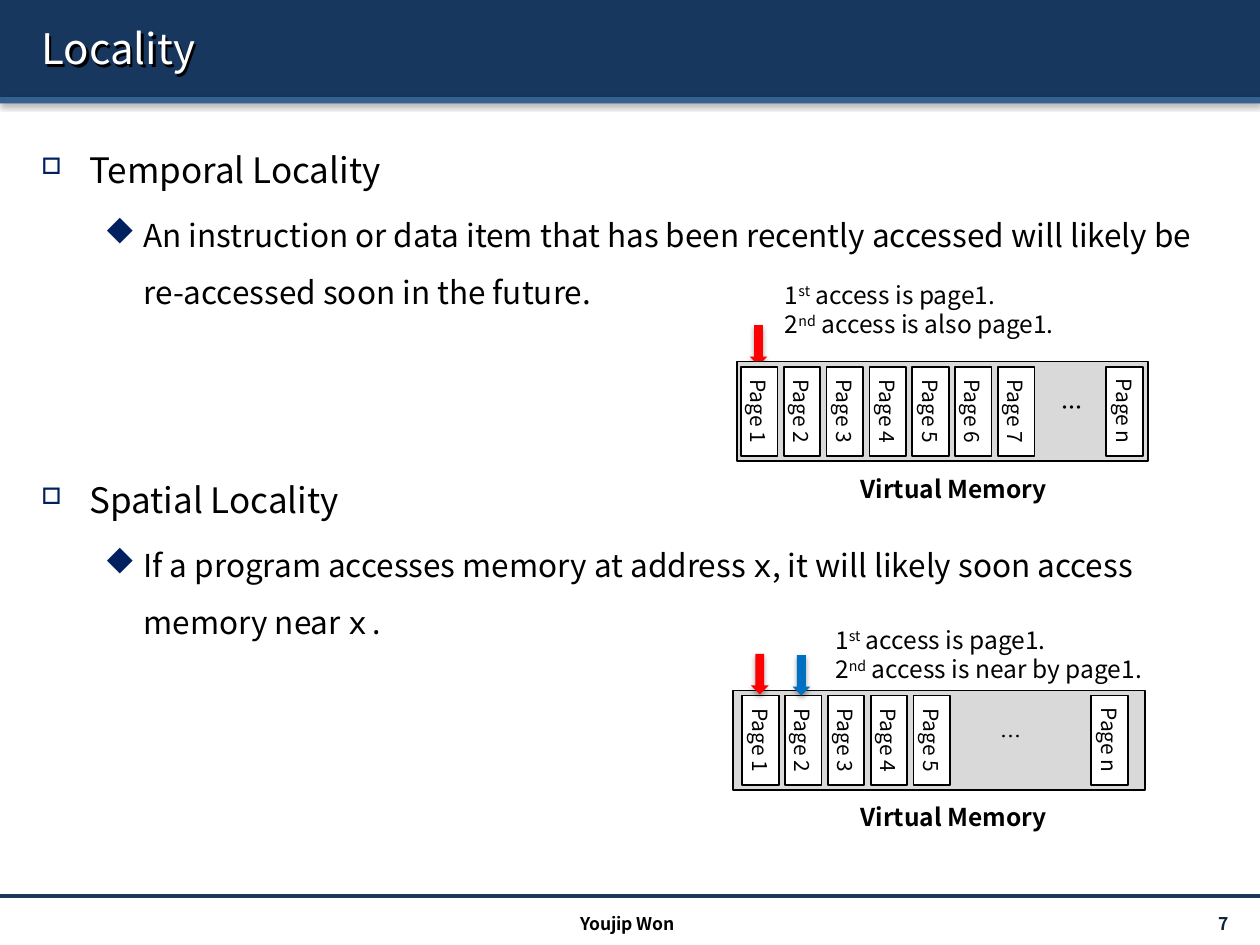
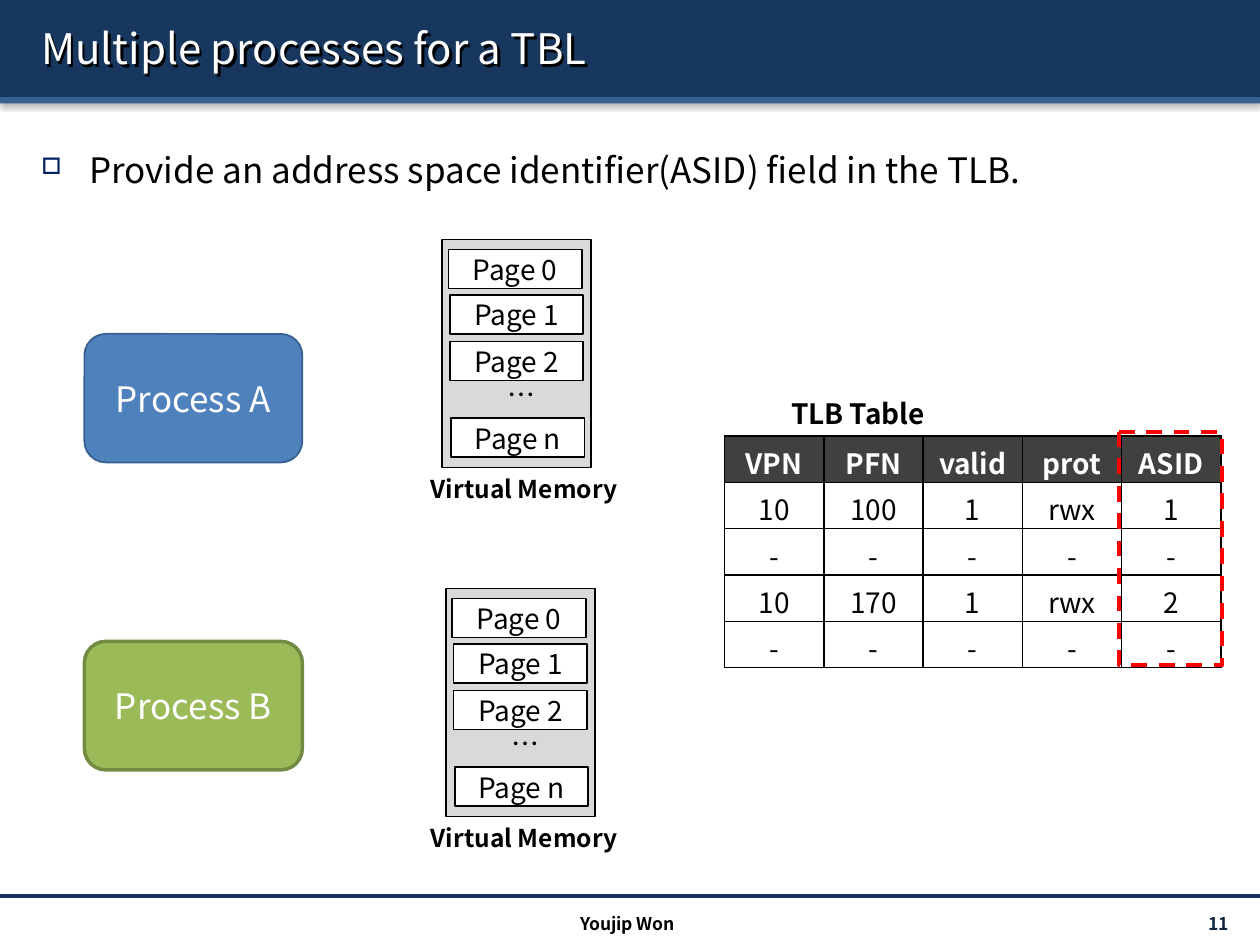
"""Two lecture slides on locality and address space identifiers."""
from dataclasses import dataclass

from lxml import etree
from pptx import Presentation
from pptx.dml.color import RGBColor
from pptx.enum.dml import MSO_LINE
from pptx.enum.shapes import MSO_CONNECTOR, MSO_SHAPE
from pptx.enum.text import MSO_ANCHOR, MSO_AUTO_SIZE, PP_ALIGN
from pptx.oxml import parse_xml
from pptx.oxml.ns import qn
from pptx.util import Inches, Pt

RECT, ROUND, DOWN = MSO_SHAPE.RECTANGLE, MSO_SHAPE.ROUNDED_RECTANGLE, MSO_SHAPE.DOWN_ARROW
LEFT, CENTER, RIGHT = PP_ALIGN.LEFT, PP_ALIGN.CENTER, PP_ALIGN.RIGHT
TOP, MIDDLE = MSO_ANCHOR.TOP, MSO_ANCHOR.MIDDLE
STRAIGHT, DASH = MSO_CONNECTOR.STRAIGHT, MSO_LINE.DASH
GROW = MSO_AUTO_SIZE.SHAPE_TO_FIT_TEXT
NS = 'xmlns:a="http://schemas.openxmlformats.org/drawingml/2006/main"'


@dataclass(frozen=True)
class Theme:
    """Fonts, colours and type sizes of the deck."""
    font: str = "Noto Sans CJK KR"
    mono: str = "Noto Sans Mono"
    symbol: str = "Wingdings"
    black: str = "000000"
    white: str = "FFFFFF"
    navy: str = "17375E"
    blue: str = "376092"
    number: str = "0F243E"
    bullet: str = "002060"
    memory: str = "D9D9D9"
    header: str = "404040"
    red: str = "FF0000"
    second: str = "0070C0"
    process_a: str = "4F81BD"
    process_b: str = "9BBB59"
    process_b_edge: str = "738A42"
    title: int = 24
    head: int = 20
    body: int = 18
    label: int = 16
    note: int = 14
    small: int = 12
    footer: int = 10


T = Theme()
LEVELS = (
    {"char": "o", "scale": 65, "margin": 0.38, "indent": -0.38, "size": T.head},
    {"char": "u", "scale": 100, "margin": 0.81, "indent": -0.31, "size": T.body},
)


def effects(alpha, blur, dist, angle):
    """Return an effect list holding one black outer shadow."""
    return parse_xml(
        f'<a:effectLst {NS}><a:outerShdw blurRad="{Pt(blur)}" dist="{Pt(dist)}" '
        f'dir="{angle * 60000}" algn="t" rotWithShape="0"><a:srgbClr val="{T.black}">'
        f'<a:alpha val="{alpha * 1000}"/></a:srgbClr></a:outerShdw></a:effectLst>')


class Deck:
    """Holds the presentation and the current slide, and draws its elements."""

    def __init__(self):
        """Start an empty 10 by 7.5 inch presentation."""
        self.prs = Presentation()
        self.prs.slide_width, self.prs.slide_height = Inches(10), Inches(7.5)
        self.s = None

    def slide(self, title, number):
        """Add a slide with its bands, title and footer."""
        self.s = self.prs.slides.add_slide(self.prs.slide_layouts[6])
        self.shape(RECT, (0, 0, 10, 0.77), T.navy, shadow=True)
        self.shape(RECT, (0, 0.77, 10, 0.05), T.blue, shadow=True)
        self.line(0, 7.11, 10, 7.11, T.navy, 2)
        sp = self.text((0.23, 0.06, 9.61, 0.64), [title], T.title, color=T.white, anchor=MIDDLE)
        sp._element.spPr.append(effects(100, 0, 2, 45))
        self.text((8.71, 7.21, 1.14, 0.24), [number], T.footer, color=T.number,
                  bold=True, align=RIGHT, anchor=MIDDLE)
        self.text((3.32, 7.2, 3.32, 0.24), ["Youjip Won"], T.footer, bold=True, align=CENTER)

    def runs(self, p, parts, size, color=T.black, bold=False):
        """Fill a paragraph with runs, each a string or a (string, kind) pair."""
        for part in parts:
            text, kind = (part, "") if isinstance(part, str) else part
            r = p.add_run()
            r.text = text
            name = T.mono if kind == "mono" else T.font
            for key, value in {"size": Pt(size), "bold": bold, "name": name}.items():
                setattr(r.font, key, value)
            r.font.color.rgb = RGBColor.from_string(color)
            rPr = r._r.get_or_add_rPr()
            ea = etree.Element(qn("a:ea"), typeface=name)
            rPr.find(qn("a:latin")).addnext(ea)
            if kind == "super":
                rPr.set("baseline", "30000")

    def text(self, box, parts, size, align=LEFT, anchor=TOP, **fmt):
        """Add a one-paragraph text box and return it."""
        sp = self.s.shapes.add_textbox(*map(Inches, box))
        tf = sp.text_frame
        tf.word_wrap, tf.vertical_anchor = True, anchor
        p = tf.paragraphs[0]
        p.alignment = align
        self.runs(p, parts, size, **fmt)
        return sp

    def bullets(self, top, height, items):
        """Add a body box of bulleted (level, parts) items."""
        tf = self.s.shapes.add_textbox(*map(Inches, (0.23, top, 9.61, height))).text_frame
        tf.word_wrap = True
        for i, (level, parts) in enumerate(items):
            style = LEVELS[level]
            p = tf.add_paragraph() if i else tf.paragraphs[0]
            pPr = p._p.get_or_add_pPr()
            pPr.set("marL", str(Inches(style["margin"])))
            pPr.set("indent", str(Inches(style["indent"])))
            for xml in (f'<a:buClr {NS}><a:srgbClr val="{T.bullet}"/></a:buClr>',
                        f'<a:buSzPct {NS} val="{style["scale"] * 1000}"/>',
                        f'<a:buFont {NS} typeface="{T.symbol}" pitchFamily="2" charset="2"/>',
                        f'<a:buChar {NS} char="{style["char"]}"/>'):
                pPr.append(parse_xml(xml))
            p.line_spacing = 1.5
            p.space_before = Pt(4 if i else 0)
            self.runs(p, parts, style["size"])

    def shape(self, kind, box, fill=None, edge=None, width=1, shadow=False):
        """Add a preset shape with plain fill and outline."""
        sp = self.s.shapes.add_shape(kind, *map(Inches, box))
        sp.shadow.inherit = False
        if shadow:
            old = sp._element.spPr.find(qn("a:effectLst"))
            old.getparent().replace(old, effects(38, 3.1, 1.6, 90))
        if fill:
            sp.fill.solid()
            sp.fill.fore_color.rgb = RGBColor.from_string(fill)
        else:
            sp.fill.background()
        if edge:
            sp.line.color.rgb = RGBColor.from_string(edge)
            sp.line.width = Pt(width)
        else:
            sp.line.fill.background()
        return sp

    def label(self, sp, text, size, color=T.black, inset=0.1):
        """Centre a label in a shape."""
        tf = sp.text_frame
        tf.word_wrap, tf.vertical_anchor = True, MIDDLE
        tf.margin_left = tf.margin_right = Inches(inset)
        p = tf.paragraphs[0]
        p.alignment = CENTER
        self.runs(p, [text], size, color)

    def line(self, x1, y1, x2, y2, color, width):
        """Add a straight line."""
        c = self.s.shapes.add_connector(STRAIGHT, *map(Inches, (x1, y1, x2, y2)))
        c.line.color.rgb = RGBColor.from_string(color)
        c.line.width = Pt(width)
        etree.SubElement(c._element.spPr, qn("a:effectLst"))

    def arrow(self, left, top, color):
        """Add a small block arrow pointing at a page."""
        self.shape(DOWN, (left, top, 0.14, 0.32), color, shadow=True)

    def page(self, box, text, size, rotation=0):
        """Add one memory page."""
        sp = self.shape(RECT, box, T.white, T.black)
        sp.rotation = rotation
        self.label(sp, text, size, inset=0)

    def caption(self, left, top):
        """Name a memory drawing."""
        self.text((left, top, 1.92, 0.34), ["Virtual Memory"], T.note, bold=True, align=CENTER)

    def accesses(self, left, top, width, second):
        """List the first and second page access."""
        tf = self.s.shapes.add_textbox(*map(Inches, (left, top, width, 0.57))).text_frame
        tf.word_wrap, tf.auto_size = False, GROW
        lines = (("1", "st", " access is page1."), ("2", "nd", second))
        for i, (digit, suffix, rest) in enumerate(lines):
            p = tf.add_paragraph() if i else tf.paragraphs[0]
            self.runs(p, [digit, (suffix, "super"), rest], T.note)

    def strip(self, frame, first, count, last, dots, bold=False):
        """Draw memory as a row of upright pages."""
        top = frame[1] + 0.25
        self.shape(RECT, frame, T.memory, T.black)
        lefts = [(first + 0.34 * i, f"Page {i + 1}") for i in range(count)]
        for left, name in lefts + [(last, "Page n")]:
            self.page((left, top, 0.71, 0.29), name, T.small, 90)
        self.text((dots, top - 0.04, 0.71, 0.3), ["…"], T.small, bold=bold,
                  align=CENTER if bold else LEFT)
        self.caption(6.61, frame[1] + 0.84)

    def stack(self, left, top):
        """Draw memory as a column of pages."""
        self.shape(RECT, (left, top, 1.18, 1.81), T.memory, T.black)
        for dx, dy, name in ((0.05, 0.08, "0"), (0.06, 0.44, "1"),
                             (0.06, 0.81, "2"), (0.07, 1.42, "n")):
            self.page((left + dx, top + dy, 1.06, 0.31), f"Page {name}", T.label)
        self.text((left + 0.42, top + 1.05, 1.16, 0.37), ["…"], T.label)
        self.caption(3.2, top + 1.81)

    def process(self, top, name, fill, edge, width):
        """Add a rounded process box."""
        sp = self.shape(ROUND, (0.67, top, 1.73, 1.02), fill, edge, width)
        self.label(sp, name, T.head, T.white)

    def table(self, box, rows):
        """Add a ruled table with a dark header row."""
        table = self.s.shapes.add_table(len(rows), len(rows[0]), *map(Inches, box)).table
        table.horz_banding = False
        for i, row in enumerate(rows):
            for j, value in enumerate(row):
                cell = table.cell(i, j)
                tcPr = cell._tc.get_or_add_tcPr()
                for side in ("lnL", "lnR", "lnT", "lnB"):
                    tcPr.append(parse_xml(
                        f'<a:{side} {NS} w="{Pt(1)}"><a:solidFill><a:srgbClr '
                        f'val="{T.black}"/></a:solidFill></a:{side}>'))
                if i:
                    cell.fill.background()
                else:
                    cell.fill.solid()
                    cell.fill.fore_color.rgb = RGBColor.from_string(T.header)
                p = cell.text_frame.paragraphs[0]
                p.alignment = CENTER
                self.runs(p, [value], T.label, T.black if i else T.white, bold=not i)


def locality(d):
    """Draw the slide on temporal and spatial locality."""
    d.slide("Locality", "7")
    d.bullets(0.96, 1.7, [
        (0, ["Temporal Locality"]),
        (1, ["An instruction or data item that has been recently accessed will likely be "
             "re-accessed soon in the future."])])
    d.bullets(3.58, 1.7, [
        (0, ["Spatial Locality"]),
        (1, ["If a program accesses memory at address ", ("x", "mono"),
             ", it will likely soon access memory near ", ("x.", "mono")])])
    d.arrow(5.95, 2.58, T.red)
    d.accesses(6.13, 2.17, 2.38, " access is also page1.")
    d.strip((5.85, 2.87, 3.26, 0.79), 5.67, 7, 8.57, 8.15, bold=True)
    d.strip((5.82, 5.48, 3.27, 0.79), 5.68, 5, 8.45, 7.84)
    d.arrow(5.96, 5.19, T.red)
    d.arrow(6.29, 5.2, T.second)
    d.accesses(6.53, 4.91, 2.7, " access is near by page1.")


def processes(d):
    """Draw the slide on sharing the table between processes."""
    d.slide("Multiple processes for a TBL", "11")
    d.bullets(0.96, 0.7, [(0, ["Provide an address space identifier(ASID) field in the TLB."])])
    d.process(2.65, "Process A", T.process_a, T.blue, 1)
    d.process(5.09, "Process B", T.process_b, T.process_b_edge, 2)
    d.stack(3.51, 1.9)
    d.stack(3.54, 4.67)
    d.text((6.18, 3.1, 1.54, 0.37), ["TLB Table"], T.label, bold=True)
    unused = ["-"] * 5
    d.table((5.75, 3.46, 3.94, 1.84), [
        ["VPN", "PFN", "valid", "prot", "ASID"],
        ["10", "100", "1", "rwx", "1"], unused,
        ["10", "170", "1", "rwx", "2"], unused])
    mark = d.shape(ROUND, (8.88, 3.43, 0.82, 1.85), edge=T.red, width=2.25)
    mark.adjustments[0] = 0
    mark.line.dash_style = DASH


def main():
    """Build and save both slides."""
    d = Deck()
    locality(d)
    processes(d)
    d.prs.save("out.pptx")


if __name__ == "__main__":
    main()
